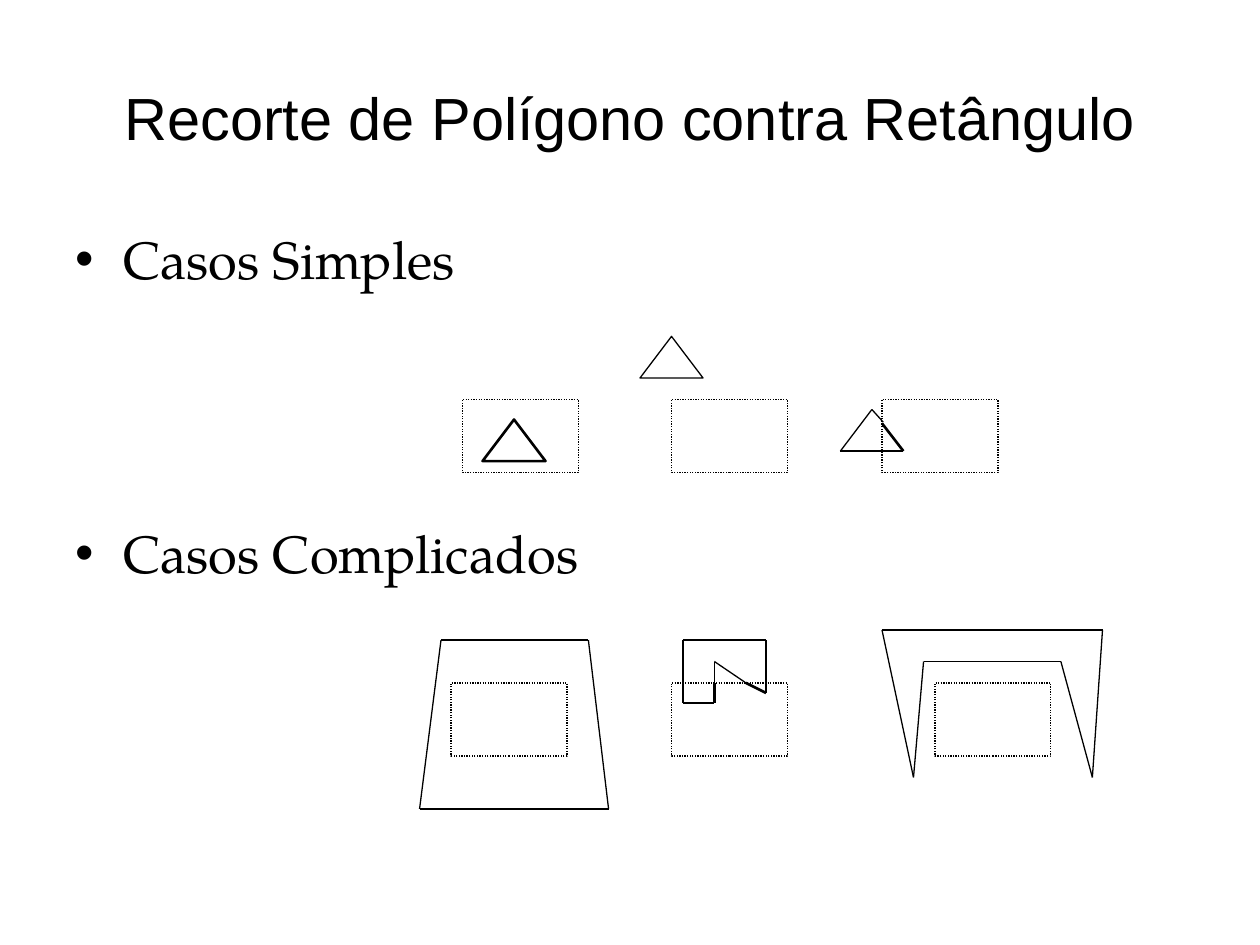
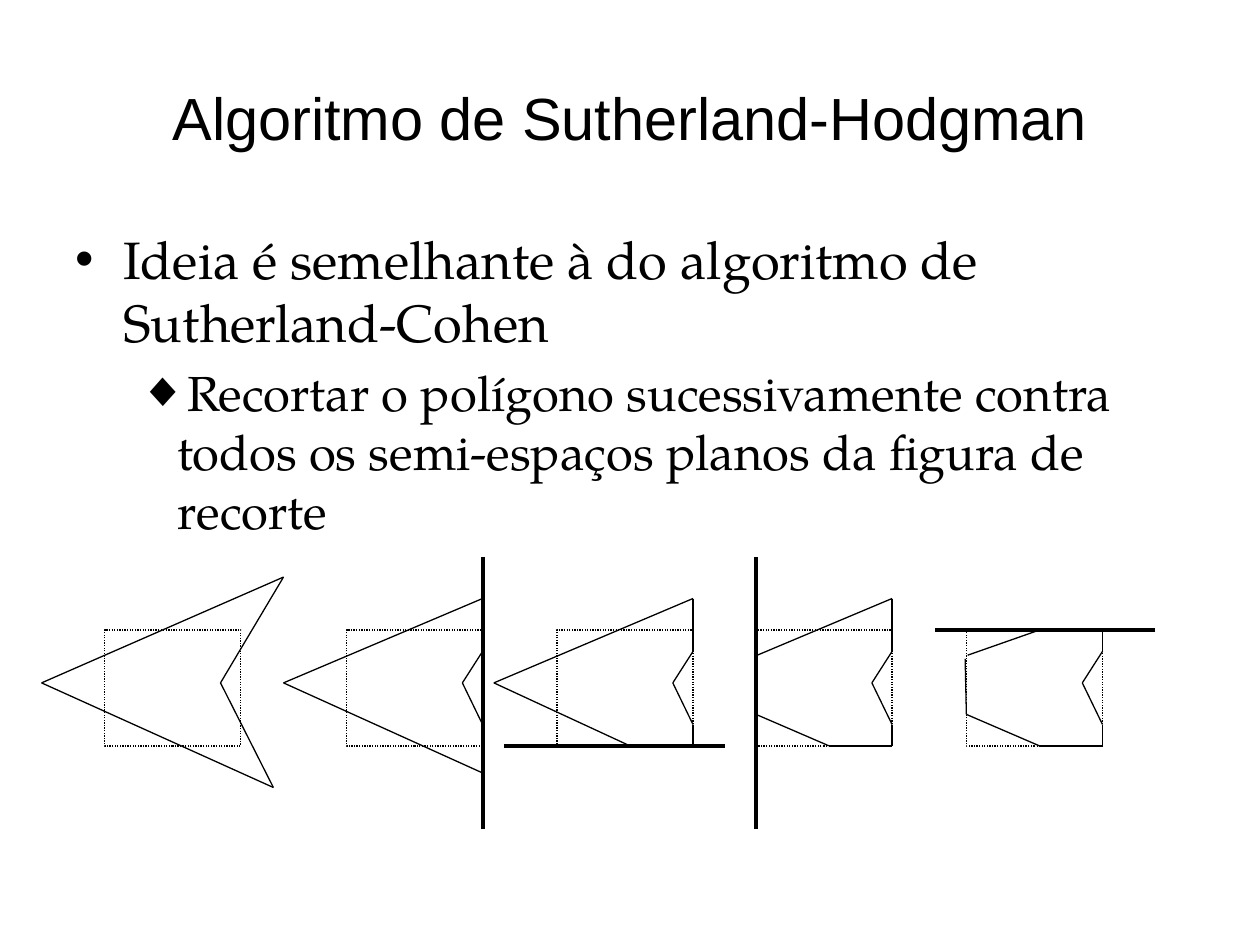
from lxml import etree
from pptx import Presentation
from pptx.dml.color import RGBColor
from pptx.enum.dml import MSO_LINE
from pptx.enum.shapes import MSO_CONNECTOR, MSO_SHAPE
from pptx.enum.text import MSO_ANCHOR, MSO_AUTO_SIZE, PP_ALIGN
from pptx.oxml.ns import qn
from pptx.util import Inches, Pt

# Shared style
COLORS = {"ink": "000000", "paper": "FFFFFF"}
TITLE_BOX = (0.5, 0.3, 9, 1.25)
BODY_BOX = (0.5, 1.75, 9, 4.95)
TITLE_FONT = {"name": "Arial", "size": Pt(34), "bold": False}
BODY_FONTS = [{"name": "TeX Gyre Pagella", "size": Pt(size)} for size in (30, 28)]
TITLE_FRAME = {"word_wrap": True, "auto_size": MSO_AUTO_SIZE.NONE,
               "vertical_anchor": MSO_ANCHOR.MIDDLE}
BODY_FRAME = {**TITLE_FRAME, "vertical_anchor": MSO_ANCHOR.TOP}
BULLET_FONT = "Arial"
BULLETS = [("•", 0.38, -0.38), ("◆", 0.81, -0.31)]  # symbol, margin, indent
THIN, THICK, CUT = 0.75, 1.5, 2.25

# Clipping windows
CASE_WINDOW = (0.92, 0.58)
STAGE_WINDOW = (1.08, 0.92)
SIMPLE_TOP, COMPLEX_TOP, STAGE_TOP = 3.17, 5.42, 5
TRIANGLE = (0.5, 0.33)


def color(name):
    return RGBColor.from_string(COLORS[name])


def apply(target, values):
    for name, value in values.items():
        setattr(target, name, value)


def format_run(r, font):
    apply(r.font, font)
    r.font.color.rgb = color("ink")


def format_line(line, width, dash=None):
    line.color.rgb = color("ink")
    line.width = Pt(width)
    if dash:
        line.dash_style = dash


def inches(values):
    return [Inches(value) for value in values]


def add_title_slide(prs, title):
    s = prs.slides.add_slide(prs.slide_layouts[5])
    s.background.fill.solid()
    s.background.fill.fore_color.rgb = color("paper")
    sp = s.shapes.title
    apply(sp, dict(zip(("left", "top", "width", "height"), inches(TITLE_BOX))))
    tf = sp.text_frame
    apply(tf, TITLE_FRAME)
    p = tf.paragraphs[0]
    p.alignment = PP_ALIGN.CENTER
    r = p.add_run()
    r.text = title
    format_run(r, TITLE_FONT)
    return s


def add_bullet(p, level):
    symbol, margin, indent = BULLETS[level]
    pPr = p._p.get_or_add_pPr()
    pPr.set("marL", str(Inches(margin)))
    pPr.set("indent", str(Inches(indent)))
    etree.SubElement(pPr, qn("a:buFont")).set("typeface", BULLET_FONT)
    etree.SubElement(pPr, qn("a:buChar")).set("char", symbol)


def add_body(s, box, items):
    """Items are (level, space before in points, text)."""
    tf = s.shapes.add_textbox(*inches(box)).text_frame
    apply(tf, BODY_FRAME)
    for i, (level, space, text) in enumerate(items):
        p = tf.paragraphs[0] if i == 0 else tf.add_paragraph()
        apply(p, {"level": level, "space_before": Pt(space)})
        r = p.add_run()
        r.text = text
        format_run(r, BODY_FONTS[level])
        add_bullet(p, level)


def add_outline(s, kind, box, width, dash=None):
    sp = s.shapes.add_shape(kind, *inches(box))
    sp.shadow.inherit = False
    sp.fill.background()
    format_line(sp.line, width, dash)


def add_path(s, origin, points, width=THIN, closed=False):
    """Join points, given relative to origin, with straight lines."""
    x, y = origin
    ends = points[1:] + points[:1] if closed else points[1:]
    for (x1, y1), (x2, y2) in zip(points, ends):
        line = s.shapes.add_connector(
            MSO_CONNECTOR.STRAIGHT, *inches((x + x1, y + y1, x + x2, y + y2)))
        format_line(line.line, width)
        etree.SubElement(line._element.spPr, qn("a:effectLst"))


def add_window(s, origin, size):
    add_outline(s, MSO_SHAPE.RECTANGLE, (*origin, *size), THIN, MSO_LINE.ROUND_DOT)


def add_triangle_case(s, origin, offset, width):
    add_window(s, origin, CASE_WINDOW)
    corner = [a + b for a, b in zip(origin, offset)]
    add_outline(s, MSO_SHAPE.ISOSCELES_TRIANGLE, (*corner, *TRIANGLE), width)


def add_polygon_case(s, origin, outside, inside=(), closed=False):
    """Thin lines lie outside the window, thick ones are kept by it."""
    add_window(s, origin, CASE_WINDOW)
    for points in outside:
        add_path(s, origin, points, THIN, closed)
    for points in inside:
        add_path(s, origin, points, THICK)


def add_stage(s, origin, paths, cut=None, closed=False):
    add_window(s, origin, STAGE_WINDOW)
    for points in paths:
        add_path(s, origin, points, THIN, closed)
    if cut:
        add_path(s, origin, cut, CUT)


def build_cases(prs):
    s = add_title_slide(prs, "Recorte de Polígono contra Retângulo")
    add_body(s, BODY_BOX, [(0, 6, "Casos Simples"), (0, 132, "Casos Complicados")])

    # Simple cases: inside, outside, crossing one side
    add_triangle_case(s, (3.67, SIMPLE_TOP), (0.16, 0.16), THICK)
    add_triangle_case(s, (5.33, SIMPLE_TOP), (-0.25, -0.5), THIN)
    add_polygon_case(
        s, (7, SIMPLE_TOP),
        outside=[[(0, 0.41), (-0.33, 0.41), (-0.08, 0.08), (0.01, 0.18)]],
        inside=[[(0, 0.19), (0.17, 0.41), (0, 0.41)]])

    # Complicated cases: concave, wrapped around, enclosing
    add_polygon_case(
        s, (5.33, COMPLEX_TOP),
        outside=[[(0.09, 0), (0.09, -0.34), (0.75, -0.34), (0.75, 0)],
                 [(0.34, 0), (0.34, -0.17), (0.59, 0)]],
        inside=[[(0.59, 0), (0.75, 0.08), (0.75, 0)],
                [(0.09, 0), (0.09, 0.16), (0.34, 0.16), (0.34, 0)]])
    add_polygon_case(
        s, (7.42, COMPLEX_TOP), closed=True,
        outside=[[(1.25, 0.75), (1, -0.17), (-0.09, -0.17),
                  (-0.17, 0.75), (-0.42, -0.42), (1.33, -0.42)]])
    add_polygon_case(
        s, (3.58, COMPLEX_TOP), closed=True,
        outside=[[(-0.08, -0.34), (-0.25, 1), (1.25, 1), (1.09, -0.34)]])


def build_algorithm(prs):
    s = add_title_slide(prs, "Algoritmo de Sutherland-Hodgman")
    add_body(s, BODY_BOX, [
        (0, 6, "Ideia é semelhante à do algoritmo de Sutherland-Cohen"),
        (1, 5.6, "Recortar o polígono sucessivamente contra todos os "
                 "semi-espaços planos da figura de recorte")])

    # Vertices the stages have in common, relative to the window
    right, bottom = STAGE_WINDOW
    tip, notch = (-0.5, 0.42), (0.92, 0.42)
    dent = [(right, 0.17), notch, (right, 0.75)]
    upper_right = (right, -0.25)
    upper_left, lower_left = (0.01, 0.2), (0, 0.67)
    bottom_cut, corner = (0.58, bottom), (right, bottom)

    # Whole polygon, then clipped right, bottom, left and top
    stages = [
        (0.83, [[tip, (1.42, -0.42), notch, (1.34, 1.25)]], None),
        (2.75, [[(1.07, 1.13), tip, upper_right], dent],
         [(right, -0.58), (right, 1.58)]),
        (4.42, [[bottom_cut, tip, upper_right, *dent, corner]],
         [(1.33, bottom), (-0.42, bottom)]),
        (6, [[upper_left, upper_right, *dent, corner, bottom_cut, lower_left]],
         [(0, -0.58), (0, 1.58)]),
        (7.67, [[upper_left, (0.58, 0)],
                [(right, 0), *dent, corner, bottom_cut, lower_left, (-0.01, 0.23)]],
         [(1.5, 0), (-0.25, 0)]),
    ]
    for left, paths, cut in stages:
        add_stage(s, (left, STAGE_TOP), paths, cut, closed=cut is None)


def main():
    prs = Presentation()
    prs.slide_width, prs.slide_height = Inches(10), Inches(7.5)
    build_cases(prs)
    build_algorithm(prs)
    prs.save("out.pptx")


if __name__ == "__main__":
    main()
